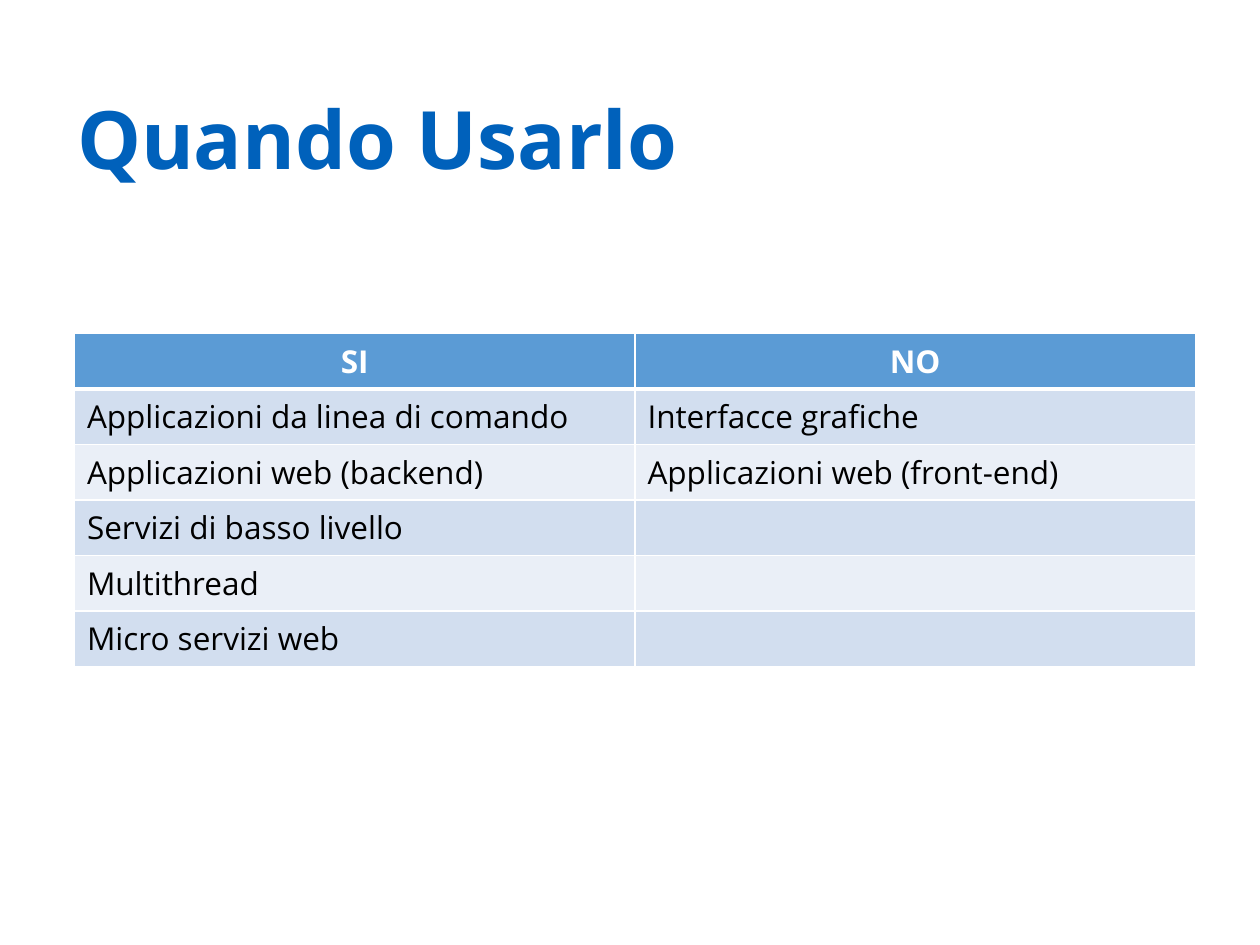
import pptx
import pptx.util
import pptx.dml.color
import pptx.enum.text
import pptx.oxml.ns
import lxml.etree

Cm = pptx.util.Cm
Pt = pptx.util.Pt
ALIGN = pptx.enum.text.PP_ALIGN
ANCHOR = pptx.enum.text.MSO_ANCHOR

FONT = "Open Sans"
WHITE = "FFFFFF"
HEAD = "5B9BD5"
BANDS = ("EAEFF7", "D2DEEF")
ROWS = [
    ("SI", "NO"),
    ("Applicazioni da linea di comando", "Interfacce grafiche"),
    ("Applicazioni web (backend)", "Applicazioni web (front-end)"),
    ("Servizi di basso livello", ""),
    ("Multithread", ""),
    ("Micro servizi web", ""),
]


def color(code):
    return pptx.dml.color.RGBColor.from_string(code)


def add_run(para, text, size, code, bold=False):
    run = para.add_run()
    run.text = text
    run.font.name = FONT
    run.font.size = Pt(size)
    run.font.bold = bold
    run.font.color.rgb = color(code)


def add_edge(cell, side, width):
    """Draw one white border; the fill must be set afterwards."""
    qn = pptx.oxml.ns.qn
    props = cell._tc.get_or_add_tcPr()
    line = lxml.etree.SubElement(props, qn("a:" + side), w=str(Pt(width)))
    fill = lxml.etree.SubElement(line, qn("a:solidFill"))
    lxml.etree.SubElement(fill, qn("a:srgbClr"), val=WHITE)


def set_title(slide, text):
    title = slide.shapes.title
    title.left, title.top = Cm(1.3), Cm(1.02)
    title.width, title.height = Cm(22.78), Cm(3.12)
    frame = title.text_frame
    frame.auto_size = pptx.enum.text.MSO_AUTO_SIZE.NONE
    frame.vertical_anchor = ANCHOR.MIDDLE
    para = frame.paragraphs[0]
    para.alignment = ALIGN.LEFT
    para.line_spacing = 1.2
    add_run(para, text, 46, "0061BB", True)


def fill_cell(cell, text, row):
    head = row == 0
    # The rule under the header is thicker than the others
    for side in ("lnL", "lnR", "lnT", "lnB"):
        thick = (head and side == "lnB") or (row == 1 and side == "lnT")
        add_edge(cell, side, 3 if thick else 1)
    cell.fill.solid()
    cell.fill.fore_color.rgb = color(HEAD if head else BANDS[row % 2])
    para = cell.text_frame.paragraphs[0]
    para.alignment = ALIGN.CENTER if head else ALIGN.LEFT
    if text:
        add_run(para, text, 18, WHITE if head else "000000", head)
    else:
        para.font.size = Pt(18)
        para.font.name = FONT


def add_grid(slide, rows):
    high = Cm(1.03)
    frame = slide.shapes.add_table(
        len(rows), len(rows[0]), Cm(1.5), Cm(6.72), Cm(22.6), high * len(rows))
    table = frame.table
    for r, texts in enumerate(rows):
        table.rows[r].height = high
        for c, text in enumerate(texts):
            fill_cell(table.cell(r, c), text, r)


def main():
    deck = pptx.Presentation()
    deck.slide_width, deck.slide_height = Cm(25.4), Cm(19.05)
    slide = deck.slides.add_slide(deck.slide_layouts[5])
    set_title(slide, "Quando Usarlo")
    # Two columns: when to use it and when not
    add_grid(slide, ROWS)
    deck.save("out.pptx")


if __name__ == "__main__":
    main()
